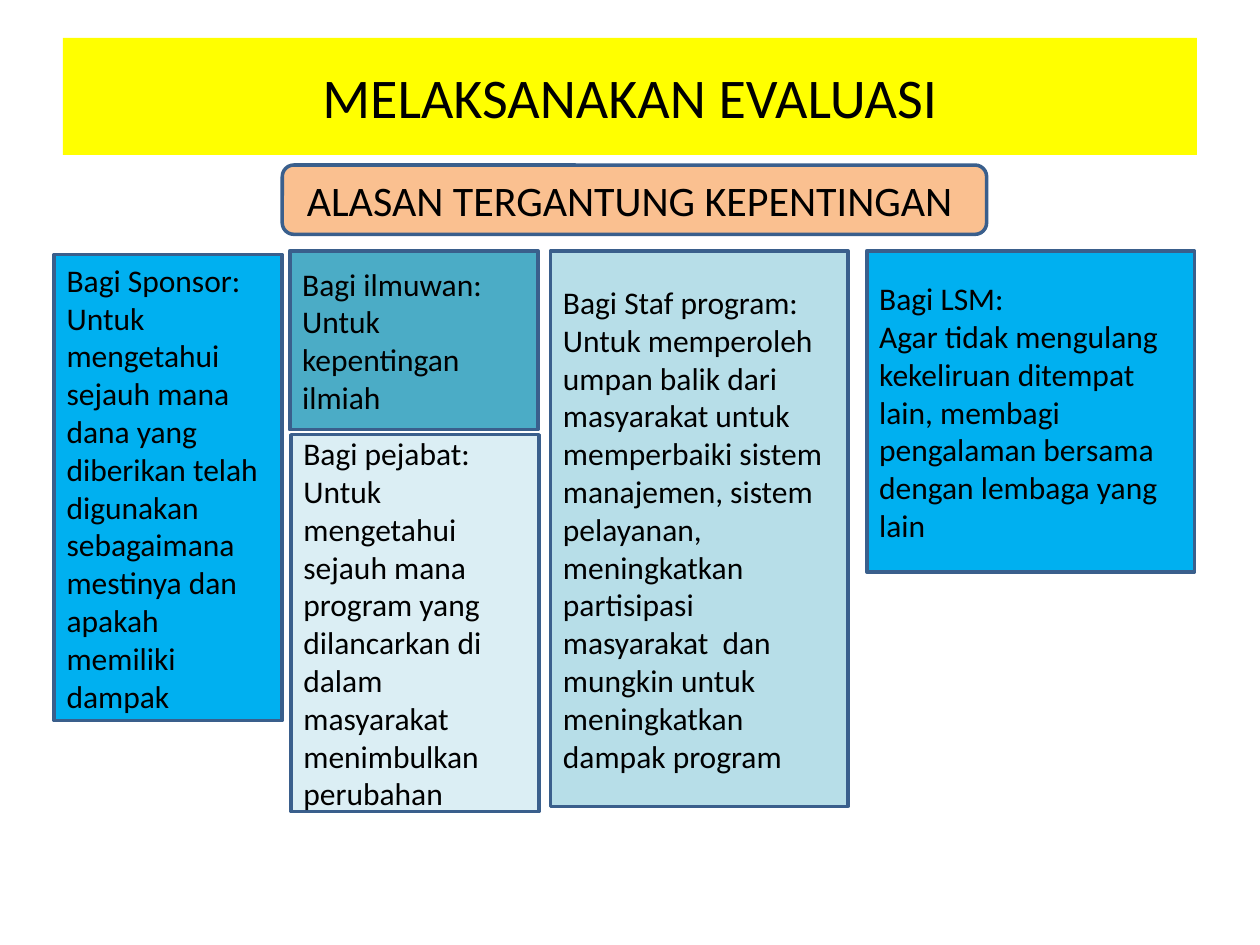
from dataclasses import dataclass
from typing import Optional

import pptx
import pptx.dml.color
import pptx.enum.shapes
import pptx.enum.text
import pptx.util

Inches = pptx.util.Inches
Pt = pptx.util.Pt
RGBColor = pptx.dml.color.RGBColor
Shape = pptx.enum.shapes.MSO_SHAPE
Align = pptx.enum.text.PP_ALIGN
Anchor = pptx.enum.text.MSO_ANCHOR

BLACK = RGBColor(0x00, 0x00, 0x00)
YELLOW = RGBColor(0xFF, 0xFF, 0x00)
PEACH = RGBColor(0xFA, 0xC0, 0x90)
BRIGHT_BLUE = RGBColor(0x00, 0xB0, 0xF0)
TEAL = RGBColor(0x4B, 0xAC, 0xC6)
PALE_TEAL = RGBColor(0xDB, 0xEE, 0xF4)
LIGHT_TEAL = RGBColor(0xB7, 0xDE, 0xE8)
BORDER_BLUE = RGBColor(0x3A, 0x5F, 0x8C)

FONT = "Calibri"
ROW_TOP = 1.99


@dataclass(frozen=True)
class Panel:
    left: float
    top: float
    width: float
    height: float
    fill: RGBColor
    lines: tuple[str, ...]
    size: int = 18
    align: Align = Align.LEFT
    outline: Optional[RGBColor] = BORDER_BLUE
    shape: Shape = Shape.RECTANGLE


HEADINGS = (
    Panel(0.5, 0.3, 9, 0.93, YELLOW, ("MELAKSANAKAN EVALUASI",),
          size=32, align=Align.CENTER, outline=None),
    Panel(2.24, 1.31, 5.59, 0.55, PEACH, ("ALASAN TERGANTUNG KEPENTINGAN ",),
          size=24, align=Align.CENTER, shape=Shape.ROUNDED_RECTANGLE),
)

REASONS = (
    Panel(0.43, 2.02, 1.81, 3.7, BRIGHT_BLUE, (
        "Bagi Sponsor:",
        "Untuk mengetahui sejauh mana dana yang diberikan telah digunakan "
        "sebagaimana mestinya dan apakah memiliki dampak")),
    Panel(2.3, ROW_TOP, 1.97, 1.42, TEAL, (
        "Bagi ilmuwan:",
        "Untuk kepentingan ilmiah")),
    Panel(2.31, 3.45, 1.97, 2.99, PALE_TEAL, (
        "Bagi pejabat:",
        "Untuk mengetahui sejauh mana program yang dilancarkan di dalam "
        "masyarakat menimbulkan perubahan")),
    Panel(4.37, ROW_TOP, 2.36, 4.41, LIGHT_TEAL, (
        "Bagi Staf program:",
        "Untuk memperoleh umpan balik dari masyarakat untuk memperbaiki "
        "sistem manajemen, sistem pelayanan, meningkatkan partisipasi "
        "masyarakat  dan mungkin untuk meningkatkan dampak program")),
    Panel(6.88, ROW_TOP, 2.6, 2.55, BRIGHT_BLUE, (
        "Bagi LSM:",
        "Agar tidak mengulang kekeliruan ditempat lain, membagi pengalaman "
        "bersama dengan lembaga yang lain")),
)


def draw_panel(page: pptx.slide.Slide, panel: Panel) -> None:
    box = page.shapes.add_shape(
        panel.shape, Inches(panel.left), Inches(panel.top),
        Inches(panel.width), Inches(panel.height))
    box.shadow.inherit = False
    box.fill.solid()
    box.fill.fore_color.rgb = panel.fill
    if panel.outline is None:
        box.line.fill.background()
    else:
        box.line.color.rgb = panel.outline
        box.line.width = Pt(2)

    frame = box.text_frame
    frame.word_wrap = True
    frame.vertical_anchor = Anchor.MIDDLE
    for index, line in enumerate(panel.lines):
        para = frame.add_paragraph() if index else frame.paragraphs[0]
        para.alignment = panel.align
        span = para.add_run()
        span.text = line
        span.font.name = FONT
        span.font.size = Pt(panel.size)
        span.font.color.rgb = BLACK


def main() -> None:
    deck = pptx.Presentation()
    deck.slide_width = Inches(10)
    deck.slide_height = Inches(7.5)
    page = deck.slides.add_slide(deck.slide_layouts[6])
    for panel in HEADINGS + REASONS:
        draw_panel(page, panel)
    deck.save("out.pptx")


if __name__ == "__main__":
    main()
